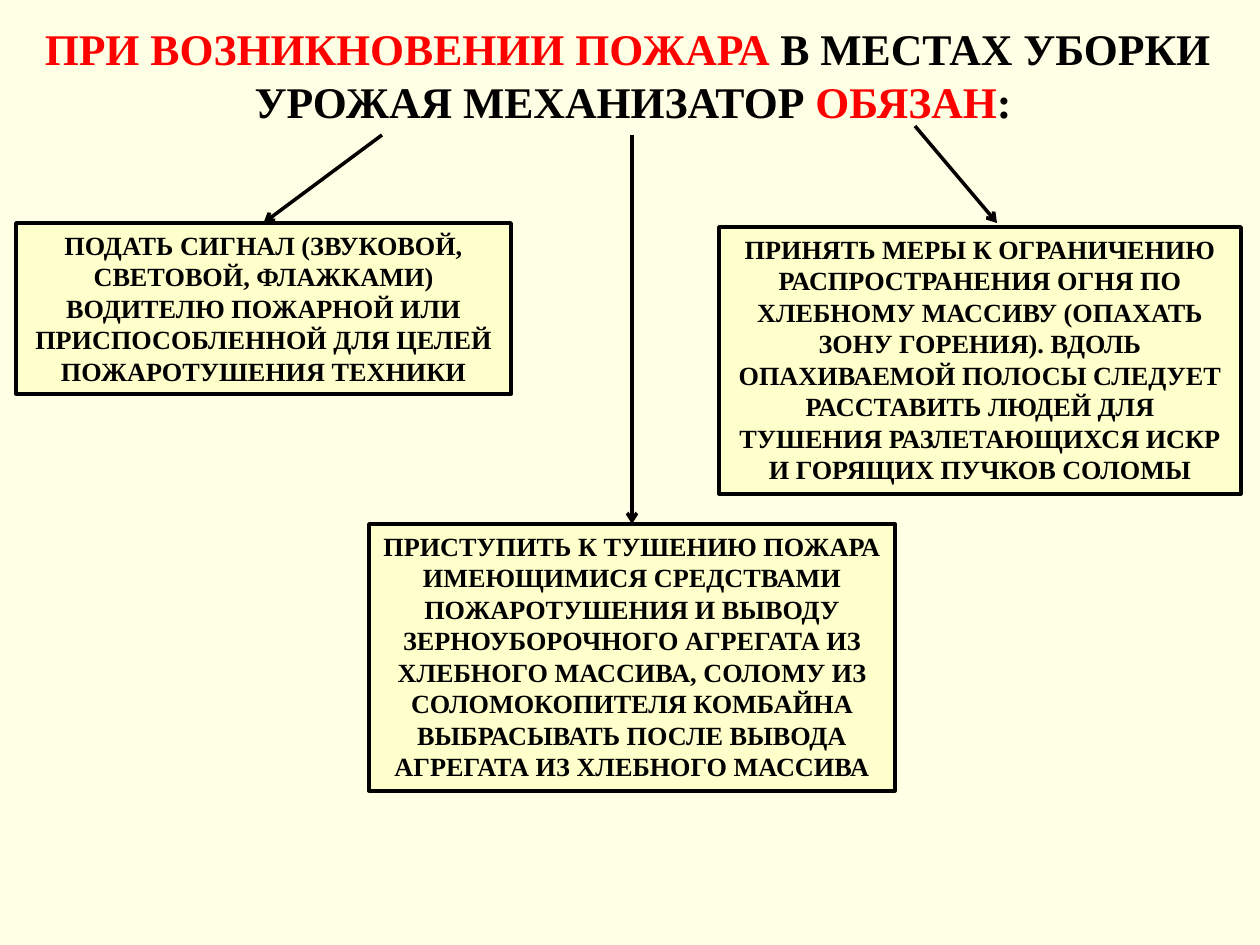
from dataclasses import dataclass

from lxml import etree
from pptx import Presentation
from pptx import util as u
from pptx.dml.color import RGBColor
from pptx.enum import shapes, text
from pptx.oxml import ns

SCALE = 914400 / 126


def px(n):
    """Turn whole pixels into EMU."""
    return u.Emu(round(n * SCALE))


@dataclass(frozen=True)
class Theme:
    """Colours, font and type sizes."""
    back: str = "FFFFE5"
    fill: str = "FFFFCC"
    ink: str = "000000"
    alert: str = "FF0000"
    font: str = "Times New Roman"
    head: int = 25
    body: int = 15
    line: int = 2


class Board:
    """Draws styled elements on the current slide."""

    def __init__(self, slide, theme):
        """Keep the slide and theme and paint the background."""
        self.slide, self.theme = slide, theme
        fill = slide.background.fill
        fill.solid()
        fill.fore_color.rgb = RGBColor.from_string(theme.back)

    def label(self, frame, rows, size):
        """Add centred paragraphs of (words, colour) runs."""
        frame.auto_size = text.MSO_AUTO_SIZE.SHAPE_TO_FIT_TEXT
        frame.vertical_anchor = text.MSO_ANCHOR.TOP
        for i, row in enumerate(rows):
            para = frame.add_paragraph() if i else frame.paragraphs[0]
            para.alignment = text.PP_ALIGN.CENTER
            for words, color in row:
                run = para.add_run()
                run.text = words
                font = run.font
                font.name, font.size, font.bold = self.theme.font, u.Pt(size), True
                font.color.rgb = RGBColor.from_string(color)

    def title(self, area, rows):
        """Add the heading."""
        frame = self.slide.shapes.add_textbox(*map(px, area)).text_frame
        frame.word_wrap = False
        self.label(frame, rows, self.theme.head)

    def stroke(self, line):
        """Style an outline or a line."""
        line.color.rgb = RGBColor.from_string(self.theme.ink)
        line.width = u.Pt(self.theme.line)

    def box(self, area, words):
        """Add a framed duty."""
        box = self.slide.shapes.add_shape(shapes.MSO_SHAPE.RECTANGLE, *map(px, area))
        box.shadow.inherit = False
        box.fill.solid()
        box.fill.fore_color.rgb = RGBColor.from_string(self.theme.fill)
        self.stroke(box.line)
        box.text_frame.word_wrap = True
        self.label(box.text_frame, [[(words, self.theme.ink)]], self.theme.body)
        return box

    def arrow(self, start, end, goal=None):
        """Add an arrow, joined to the top of a goal box if given."""
        link = self.slide.shapes.add_connector(
            shapes.MSO_CONNECTOR.STRAIGHT, *map(px, (*start, *end)))
        if goal is not None:
            link.end_connect(goal, 0)
        self.stroke(link.line)
        props = link.element.spPr
        tail = etree.SubElement(props.find(ns.qn("a:ln")), ns.qn("a:tailEnd"))
        tail.set("type", "arrow")
        etree.SubElement(props, ns.qn("a:effectLst"))


def main():
    """Build and save the slide."""
    deck = Presentation()
    deck.slide_width, deck.slide_height = px(1260), px(945)
    theme = Theme()
    board = Board(deck.slides.add_slide(deck.slide_layouts[6]), theme)
    board.title((25, 16, 1216, 118), [
        [("ПРИ ВОЗНИКНОВЕНИИ ПОЖАРА", theme.alert), (" В МЕСТАХ УБОРКИ ", theme.ink)],
        [("УРОЖАЯ МЕХАНИЗАТОР ", theme.ink), ("ОБЯЗАН", theme.alert), (":", theme.ink)],
    ])
    signal = board.box(
        (16, 223, 495, 171),
        "ПОДАТЬ СИГНАЛ (ЗВУКОВОЙ, СВЕТОВОЙ, ФЛАЖКАМИ) ВОДИТЕЛЮ ПОЖАРНОЙ ИЛИ "
        "ПРИСПОСОБЛЕННОЙ ДЛЯ ЦЕЛЕЙ ПОЖАРОТУШЕНИЯ ТЕХНИКИ")
    fight = board.box(
        (369, 524, 526, 267),
        "ПРИСТУПИТЬ К ТУШЕНИЮ ПОЖАРА ИМЕЮЩИМИСЯ СРЕДСТВАМИ ПОЖАРОТУШЕНИЯ И "
        "ВЫВОДУ ЗЕРНОУБОРОЧНОГО АГРЕГАТА ИЗ ХЛЕБНОГО МАССИВА, СОЛОМУ ИЗ "
        "СОЛОМОКОПИТЕЛЯ КОМБАЙНА ВЫБРАСЫВАТЬ ПОСЛЕ ВЫВОДА АГРЕГАТА ИЗ "
        "ХЛЕБНОГО МАССИВА")
    board.box(
        (719, 227, 522, 267),
        "ПРИНЯТЬ МЕРЫ К ОГРАНИЧЕНИЮ РАСПРОСТРАНЕНИЯ ОГНЯ ПО ХЛЕБНОМУ МАССИВУ "
        "(ОПАХАТЬ ЗОНУ ГОРЕНИЯ). ВДОЛЬ ОПАХИВАЕМОЙ ПОЛОСЫ СЛЕДУЕТ РАССТАВИТЬ "
        "ЛЮДЕЙ ДЛЯ ТУШЕНИЯ РАЗЛЕТАЮЩИХСЯ ИСКР И ГОРЯЩИХ ПУЧКОВ СОЛОМЫ")
    board.arrow((382, 135), (263, 223), signal)
    board.arrow((632, 135), (632, 524), fight)
    board.arrow((915, 126), (997, 223))
    deck.save("out.pptx")


if __name__ == "__main__":
    main()
